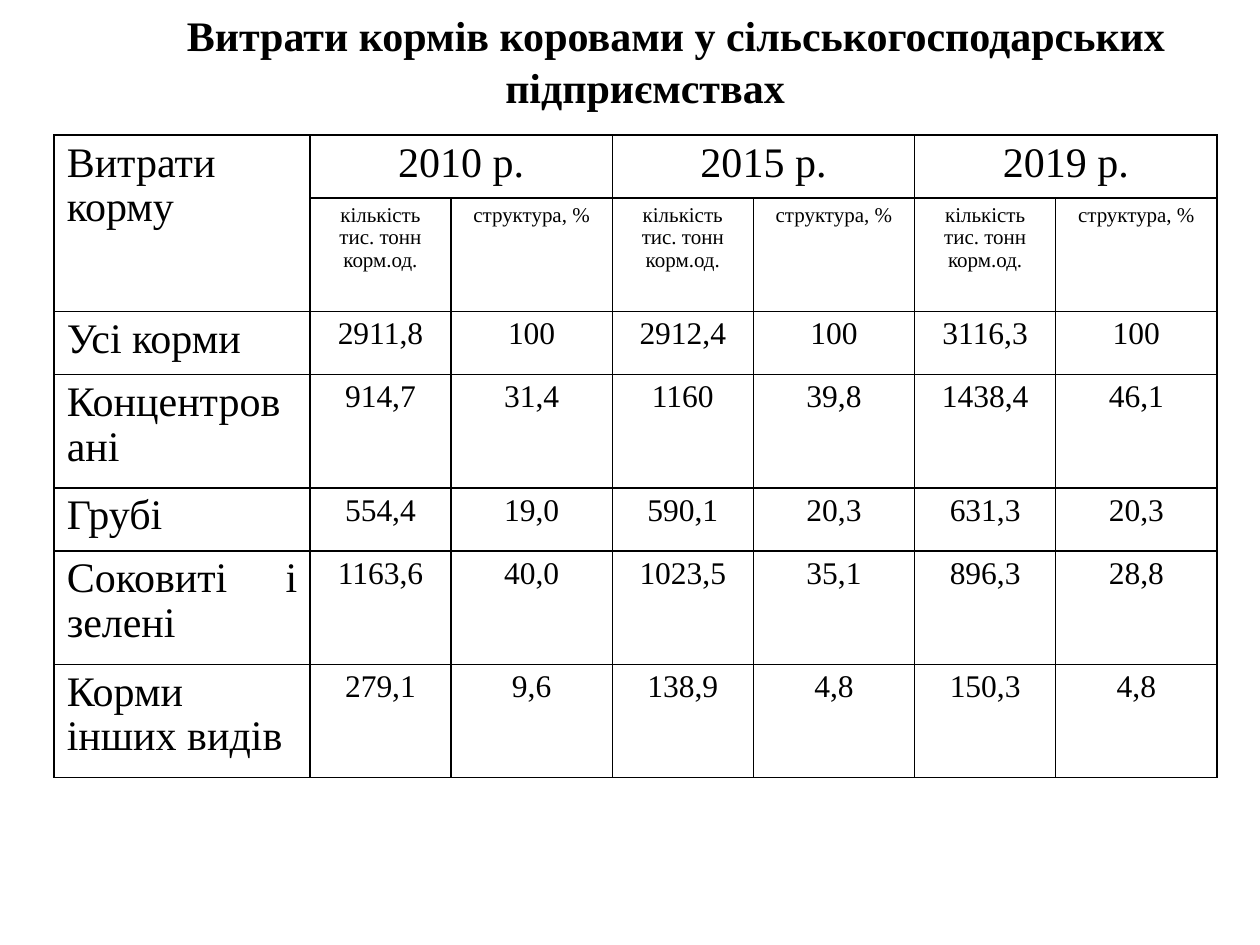
from lxml.etree import SubElement
from pptx import Presentation
from pptx.dml.color import RGBColor
from pptx.enum.text import MSO_ANCHOR, MSO_AUTO_SIZE, PP_ALIGN
from pptx.oxml.ns import qn
from pptx.util import Inches, Pt

YEARS = ["2010 р.", "2015 р.", "2019 р."]
HEADS = ["кількість тис. тонн корм.од.", "структура, %"]
FEEDS = [
    ["Усі корми", "2911,8", "100", "2912,4", "100", "3116,3", "100"],
    ["Концентровані", "914,7", "31,4", "1160", "39,8", "1438,4", "46,1"],
    ["Грубі", "554,4", "19,0", "590,1", "20,3", "631,3", "20,3"],
    ["Соковиті і зелені", "1163,6", "40,0", "1023,5", "35,1", "896,3", "28,8"],
    ["Корми інших видів", "279,1", "9,6", "138,9", "4,8", "150,3", "4,8"],
]
COLS = [2.03] + [1.12, 1.28] * 3
LOW, HIGH = 0.5, 0.9
ROWS = [LOW, HIGH, LOW, HIGH, LOW, HIGH, HIGH]


def paint(code):
    return RGBColor.from_string(code)


def write(frame, text, font, size=18, color="000000", bold=False,
          align=PP_ALIGN.CENTER, space=0.96):
    par = frame.paragraphs[0]
    par.alignment = align
    par.line_spacing = space
    par.space_before = par.space_after = Pt(0)
    run = par.add_run()
    run.text = text
    run.font.name, run.font.size, run.font.bold = font, Pt(size), bold
    run.font.color.rgb = paint(color)
    return par


def frame_cell(cell, color, width):
    """Clear the fill of a cell and rule its four sides."""
    cell.fill.background()
    props = cell._tc.get_or_add_tcPr()
    for spot, side in enumerate(("lnL", "lnR", "lnT", "lnB")):
        line = SubElement(props, qn(f"a:{side}"), w=str(Pt(width)))
        fill = SubElement(line, qn("a:solidFill"))
        SubElement(fill, qn("a:srgbClr"), val=color)
        props.insert(spot, line)


class Deck:
    font = "Times New Roman"
    ink = "000000"

    def __init__(self, wide, high):
        self.show = Presentation()
        self.show.slide_width, self.show.slide_height = Inches(wide), Inches(high)
        self.slide = self.show.slides.add_slide(self.show.slide_layouts[5])

    def place(self, x, y, w, h):
        """Turn shares of the slide's size into lengths."""
        wide, high = self.show.slide_width, self.show.slide_height
        return int(x * wide), int(y * high), int(w * wide), int(h * high)

    def title(self, text, box):
        shape = self.slide.shapes.title
        shape.left, shape.top, shape.width, shape.height = self.place(*box)
        frame = shape.text_frame
        frame.word_wrap = True
        frame.auto_size = MSO_AUTO_SIZE.NONE
        frame.vertical_anchor = MSO_ANCHOR.TOP
        par = write(frame, text, self.font, size=24, color=self.ink,
                    bold=True, space=1.04)
        par._p.get_or_add_pPr().set("indent", str(Inches(0.49)))

    def table(self, cols, rows, box):
        grid = self.slide.shapes.add_table(len(rows), len(cols), *self.place(*box)).table
        grid.first_row = grid.horz_banding = False
        for col, width in zip(grid.columns, cols):
            col.width = Inches(width)
        for row, height in zip(grid.rows, rows):
            row.height = Inches(height)
        for cell in grid.iter_cells():
            frame_cell(cell, self.ink, 1)
        return grid

    def cell(self, grid, row, col, text, down=1, across=1, **style):
        spot = grid.cell(row, col)
        if down > 1 or across > 1:
            spot.merge(grid.cell(row + down - 1, col + across - 1))
        write(spot.text_frame, text, self.font, color=self.ink, **style)


def main():
    deck = Deck(10, 7.5)
    deck.title("Витрати кормів коровами у сільськогосподарських підприємствах",
               (0.067, 0.001, 0.89, 0.13))
    grid = deck.table(COLS, ROWS, (0.043, 0.143, 0.921, 0.68))
    label = {"size": 24, "align": PP_ALIGN.JUSTIFY}

    deck.cell(grid, 0, 0, "Витрати корму", down=2, **label)
    for n, year in enumerate(YEARS):
        first = 1 + 2 * n
        deck.cell(grid, 0, first, year, across=2, size=24)
        for step, head in enumerate(HEADS):
            deck.cell(grid, 1, first + step, head, size=12)
    for row, (name, *values) in enumerate(FEEDS, 2):
        deck.cell(grid, row, 0, name, **label)
        for col, value in enumerate(values, 1):
            deck.cell(grid, row, col, value)
    deck.show.save("out.pptx")


if __name__ == "__main__":
    main()
